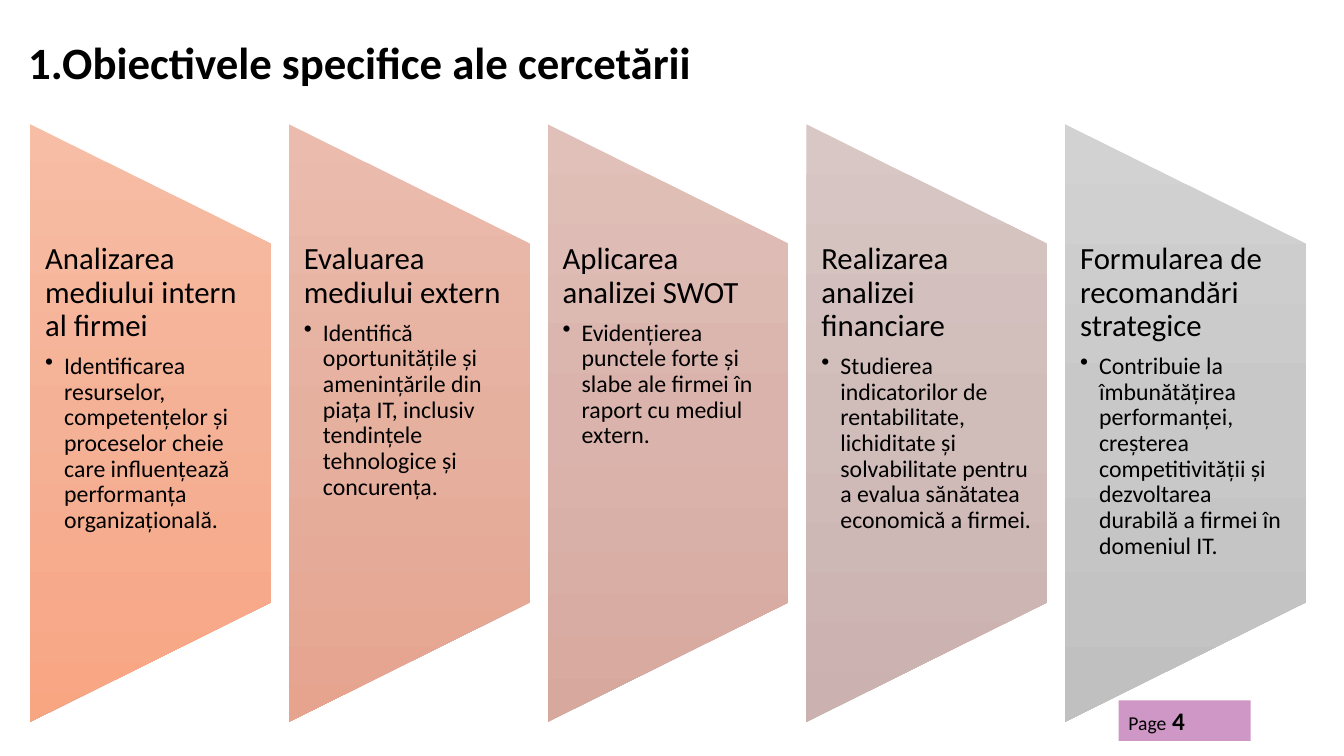
"""Build the slide listing the five specific research objectives."""
import lxml.etree
import pptx
import pptx.dml.color
import pptx.enum.shapes
import pptx.enum.text
import pptx.oxml.ns
import pptx.util

Cm = pptx.util.Cm
Pt = pptx.util.Pt
qn = pptx.oxml.ns.qn
SHAPES = pptx.enum.shapes.MSO_SHAPE
ANCHORS = pptx.enum.text.MSO_ANCHOR

COLOURS = {"text": "000000", "page": "9F318D"}
FONT = "Calibri"
BANNER_LEFT, BANNER_TOP = 0.76, 3.13
BANNER_WIDTH, BANNER_HEIGHT, BANNER_GAP = 6.07, 15.06, 0.45
BODY_TOP, BODY_HEIGHT = 6.13, 9.04

OBJECTIVES = [
    ("Analizarea mediului intern al firmei",
     "Identificarea resurselor, competențelor și proceselor cheie care "
     "influențează performanța organizațională.",
     ("F7BDA5", "F5B196", "F8A582")),
    ("Evaluarea mediului extern",
     "Identifică oportunitățile și amenințările din piața IT, inclusiv "
     "tendințele tehnologice și concurența.",
     ("EBBCAE", "E6B09F", "E6A38E")),
    ("Aplicarea analizei SWOT",
     "Evidențierea punctele forte și slabe ale firmei în raport cu mediul extern.",
     ("E0C0B9", "DAB4AC", "D7A89E")),
    ("Realizarea analizei financiare",
     "Studierea indicatorilor de rentabilitate, lichiditate și solvabilitate "
     "pentru a evalua sănătatea economică a firmei.",
     ("D8C7C5", "D0BCB9", "CBB1AF")),
    ("Formularea de recomandări strategice",
     "Contribuie la îmbunătățirea performanței, creșterea competitivității și "
     "dezvoltarea durabilă a firmei în domeniul IT.",
     ("D2D2D2", "C8C8C8", "C0C0C0")),
]


def add_text(paragraph, text, size, bold=False, spacing=None, after=None, bullet=False):
    """Append a formatted run to a paragraph and format the paragraph."""
    if bullet:
        paragraph.level = 1
        properties = paragraph._p.get_or_add_pPr()
        properties.set("marL", str(Cm(0.48)))
        properties.set("indent", str(-Cm(0.48)))
        lxml.etree.SubElement(properties, qn("a:buChar"), char="•")
    paragraph.alignment = pptx.enum.text.PP_ALIGN.LEFT
    if spacing is not None:
        paragraph.line_spacing = spacing
    if after is not None:
        paragraph.space_after = Pt(after)
    run = paragraph.add_run()
    run.text = text
    run.font.name = FONT
    run.font.size = Pt(size)
    run.font.bold = bold
    run.font.color.rgb = pptx.dml.color.RGBColor.from_string(COLOURS["text"])


def add_text_box(shapes, left, top, width, height, anchor=ANCHORS.TOP):
    """Add a wrapping text box, measured in centimetres, and return its frame."""
    frame = shapes.add_textbox(Cm(left), Cm(top), Cm(width), Cm(height)).text_frame
    frame.word_wrap = True
    frame.vertical_anchor = anchor
    return frame


def add_plain_shape(shapes, kind, left, top, width, height):
    """Add a preset shape, in centimetres, without outline or shadow."""
    shape = shapes.add_shape(kind, Cm(left), Cm(top), Cm(width), Cm(height))
    shape.shadow.inherit = False
    shape.line.fill.background()
    return shape


def fill_downwards(shape, shades):
    """Fill a shape with evenly spaced shades that run down the slide."""
    shape.fill.gradient()
    gradient = shape._element.spPr.find(qn("a:gradFill"))
    gradient.set("rotWithShape", "0")
    stops = gradient.find(qn("a:gsLst"))
    for stop in list(stops):
        stops.remove(stop)
    for index, shade in enumerate(shades):
        position = str(100000 * index // (len(shades) - 1))
        stop = lxml.etree.SubElement(stops, qn("a:gs"), pos=position)
        lxml.etree.SubElement(stop, qn("a:srgbClr"), val=shade)
    gradient.find(qn("a:lin")).set("ang", "5400000")


def add_objective(shapes, left, heading, detail, shades):
    """Add one banner with its heading and bulleted detail."""
    shift = (BANNER_HEIGHT - BANNER_WIDTH) / 2
    banner = add_plain_shape(shapes, SHAPES.FLOWCHART_MANUAL_OPERATION, left - shift,
                             BANNER_TOP + shift, BANNER_HEIGHT, BANNER_WIDTH)
    banner.rotation = 270
    fill_downwards(banner, shades)
    body = add_text_box(shapes, left, BODY_TOP, BANNER_WIDTH, BODY_HEIGHT)
    body.margin_left = body.margin_right = Cm(0.38)
    body.margin_top = body.margin_bottom = 0
    add_text(body.paragraphs[0], heading, 22, spacing=0.9, after=7.7)
    add_text(body.add_paragraph(), detail, 17, spacing=0.9, bullet=True)


def add_page_label(shapes):
    """Add the translucent page label."""
    label = add_plain_shape(shapes, SHAPES.RECTANGLE, 28.19, 17.65, 3.33, 1.02)
    label.fill.solid()
    label.fill.fore_color.rgb = pptx.dml.color.RGBColor.from_string(COLOURS["page"])
    colour = label._element.spPr.find(qn("a:solidFill"))[0]
    lxml.etree.SubElement(colour, qn("a:alpha"), val="50000")
    label.text_frame.vertical_anchor = ANCHORS.TOP
    paragraph = label.text_frame.paragraphs[0]
    add_text(paragraph, "Page", 14)
    add_text(paragraph, " 4", 18, bold=True)


def main():
    """Build and save the presentation."""
    deck = pptx.Presentation()
    deck.slide_width, deck.slide_height = Cm(33.87), Cm(19.05)
    slide = deck.slides.add_slide(deck.slide_layouts[6])
    title = add_text_box(slide.shapes, 0.46, 0.38, 29.21, 2.51, ANCHORS.MIDDLE)
    add_text(title.paragraphs[0], "1.Obiectivele specifice ale cercetării", 32,
             bold=True, spacing=0.9)
    add_page_label(slide.shapes)
    banners = slide.shapes.add_group_shape()
    for index, (heading, detail, shades) in enumerate(OBJECTIVES):
        left = BANNER_LEFT + index * (BANNER_WIDTH + BANNER_GAP)
        add_objective(banners.shapes, left, heading, detail, shades)
    deck.save("out.pptx")


if __name__ == "__main__":
    main()
